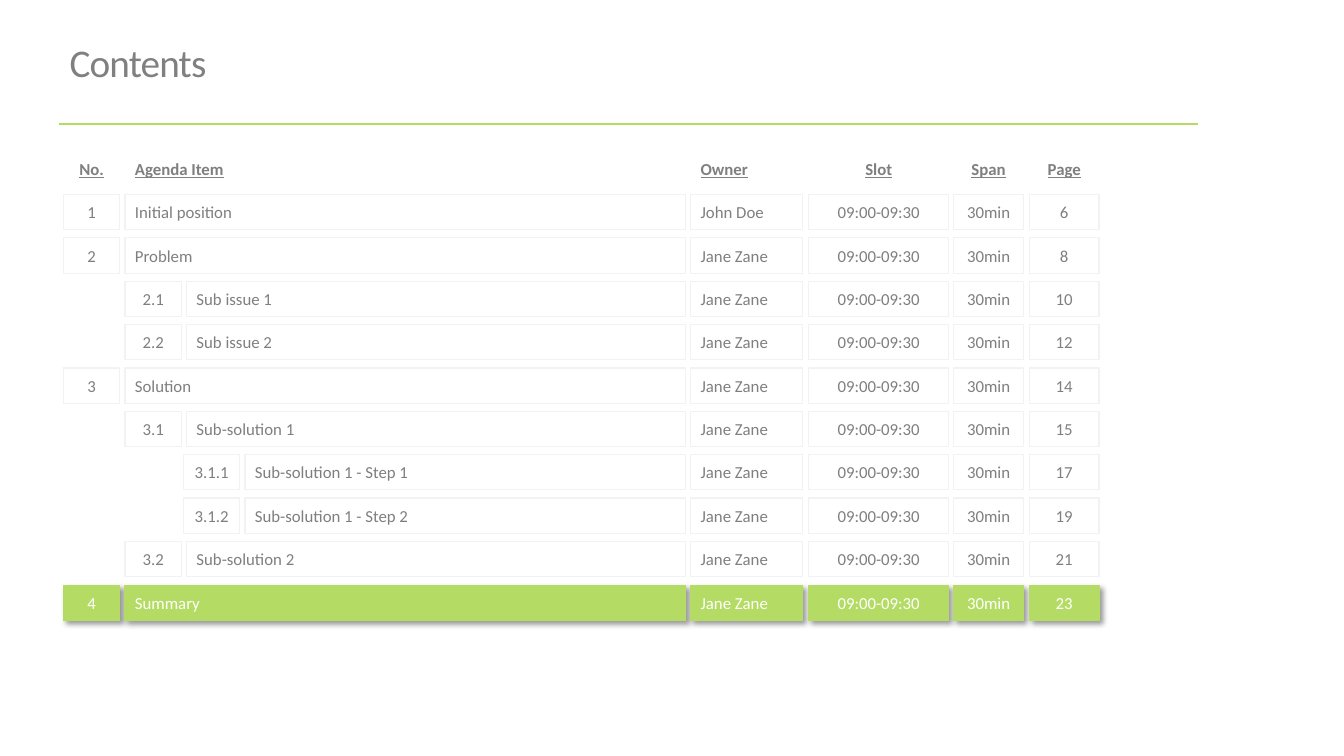
from lxml.etree import SubElement
from pptx import Presentation
from pptx.dml.color import RGBColor
from pptx.enum.shapes import MSO_CONNECTOR, MSO_SHAPE
from pptx.enum.text import MSO_ANCHOR, PP_ALIGN
from pptx.oxml.ns import qn
from pptx.util import Emu, Pt

COLORS = {
    "green": "B4DC64",
    "border": "F2F2F2",
    "text": "7F7F7F",
    "title": "808080",
    "white": "FFFFFF",
    "shadow": "000000",
}
FONT = "Calibri"
NUMBER_LEFTS = [63, 124, 182]
NUMBER_WIDTH = 56
ITEM_OFFSET = 61
ITEM_RIGHT = 680
DETAIL_COLUMNS = [
    (685, 111, PP_ALIGN.LEFT),
    (802, 139, PP_ALIGN.CENTER),
    (946, 69, PP_ALIGN.CENTER),
    (1021, 69, PP_ALIGN.CENTER),
]
FIRST_TOP = 150
TEN_ROWS = 431
CELL_HEIGHT = 35
SLOT = "09:00-09:30"
SPAN = "30min"
HEADERS = ("No.", "Agenda Item", "Owner", "Slot", "Span", "Page")
AGENDA = [
    ("1", "Initial position", "John Doe", "6"),
    ("2", "Problem", "Jane Zane", "8"),
    ("2.1", "Sub issue 1", "Jane Zane", "10"),
    ("2.2", "Sub issue 2", "Jane Zane", "12"),
    ("3", "Solution", "Jane Zane", "14"),
    ("3.1", "Sub-solution 1", "Jane Zane", "15"),
    ("3.1.1", "Sub-solution 1 - Step 1", "Jane Zane", "17"),
    ("3.1.2", "Sub-solution 1 - Step 2", "Jane Zane", "19"),
    ("3.2", "Sub-solution 2", "Jane Zane", "21"),
    ("4", "Summary", "Jane Zane", "23"),
]
CURRENT = "4"


def px(length):
    return Emu(length * 9144)


def color(name):
    return RGBColor.from_string(COLORS[name])


def add_span(para, text, size, color_name):
    span = para.add_run()
    span.text = text
    span.font.name = FONT
    span.font.size = Pt(size)
    span.font.color.rgb = color(color_name)
    return span


def add_title(page, text):
    title = page.shapes.title
    title.left, title.top, title.width, title.height = map(px, (59, 18, 1125, 93))
    title.text_frame.vertical_anchor = MSO_ANCHOR.MIDDLE
    para = title.text_frame.paragraphs[0]
    para.alignment = PP_ALIGN.LEFT
    para.line_spacing = 0.9
    span = add_span(para, text, 28, "title")
    span._r.get_or_add_rPr().set("spc", "-60")


def add_rule(page):
    rule = page.shapes.add_connector(
        MSO_CONNECTOR.STRAIGHT, px(59), px(123), px(1188), px(123))
    rule.line.color.rgb = color("green")
    rule.line.width = Pt(2)
    SubElement(rule._element.spPr, qn("a:effectLst"))


def add_shadow(box):
    effects = box._element.spPr.find(qn("a:effectLst"))
    shadow = SubElement(
        effects, qn("a:outerShdw"), blurRad=str(Pt(4)), dist=str(Pt(3)),
        dir="2700000", algn="tl", rotWithShape="0")
    tint = SubElement(shadow, qn("a:srgbClr"), val=COLORS["shadow"])
    SubElement(tint, qn("a:alpha"), val="40000")


def add_frame(page, bounds, current):
    box = page.shapes.add_shape(MSO_SHAPE.RECTANGLE, *bounds)
    box.shadow.inherit = False
    box.line.color.rgb = color("green" if current else "border")
    box.line.width = Pt(0.85)
    if current:
        box.fill.solid()
        box.fill.fore_color.rgb = color("green")
        add_shadow(box)
    else:
        box.fill.background()
    return box


def add_cell(page, left, top, width, text, alignment, kind, tight=False):
    bounds = [px(length) for length in (left, top, width, CELL_HEIGHT)]
    if kind == "header":
        box = page.shapes.add_textbox(*bounds)
    else:
        box = add_frame(page, bounds, kind == "current")
    frame = box.text_frame
    frame.word_wrap = not tight
    frame.vertical_anchor = MSO_ANCHOR.MIDDLE
    if tight:
        frame.margin_left = frame.margin_right = 0
        frame.margin_top = frame.margin_bottom = 0
    para = frame.paragraphs[0]
    para.alignment = alignment
    span = add_span(para, text, 12, "white" if kind == "current" else "text")
    if kind == "header":
        span.font.bold = True
        span.font.underline = True


def add_row(page, index, number, item, details, kind):
    top = FIRST_TOP + index * TEN_ROWS // 10
    depth = 0 if kind == "header" else number.count(".")
    number_left = NUMBER_LEFTS[depth]
    item_left = number_left + ITEM_OFFSET
    add_cell(page, number_left, top, NUMBER_WIDTH, number,
             PP_ALIGN.CENTER, kind, tight=True)
    add_cell(page, item_left, top, ITEM_RIGHT - item_left, item,
             PP_ALIGN.LEFT, kind)
    for (left, width, alignment), text in zip(DETAIL_COLUMNS, details):
        add_cell(page, left, top, width, text, alignment, kind)


def main():
    deck = Presentation()
    deck.slide_width, deck.slide_height = px(1333), px(750)
    page = deck.slides.add_slide(deck.slide_layouts[5])
    add_rule(page)
    add_title(page, "Contents")
    add_row(page, 0, HEADERS[0], HEADERS[1], HEADERS[2:], "header")
    for index, (number, item, owner, page_number) in enumerate(AGENDA, 1):
        kind = "current" if number == CURRENT else "plain"
        add_row(page, index, number, item, (owner, SLOT, SPAN, page_number), kind)
    deck.save("out.pptx")


if __name__ == "__main__":
    main()
